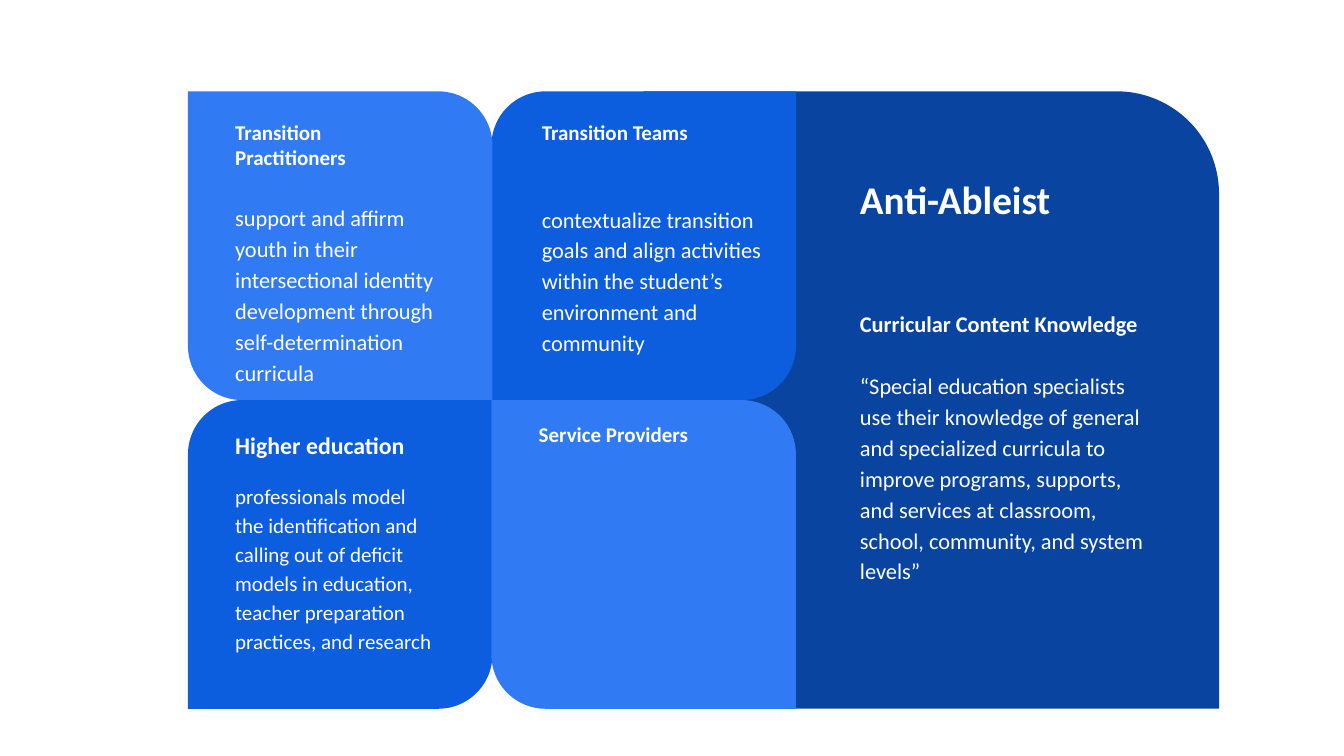
import pptx
import pptx.util
import pptx.dml.color
import pptx.enum.shapes
import pptx.enum.text

PX = 9525  # EMU per px; the slide is 1280 by 720 px
FONT = "Calibri"
INSET = 12
ROUND = 0.178
COLORS = {
    "navy": "0944A1",
    "blue": "0D5DDF",
    "sky": "307BF3",
    "white": "FFFFFF",
}

# Tile grid
LEFT, TOP = 179, 87
WIDE, HIGH = 290, 294
STEP = 289

# Column, row, fill, heading and body as (text, size, left, top, width, height)
TILES = [
    (1, 0, "blue",
     ("Transition Teams", 15, 504, 102, 216, 86),
     ("contextualize transition goals and align activities within the "
      "student’s environment and community", 16, 504, 180, 234, 151)),
    (0, 0, "sky",
     ("Transition Practitioners", 15, 212, 102, 216, 86),
     ("support and affirm youth in their intersectional identity development "
      "through self-determination curricula", 16, 212, 179, 239, 96)),
    (0, 1, "blue",
     ("Higher education", 17, 212, 394, 216, 86),
     ("professionals model the identification and calling out of deficit "
      "models in education, teacher preparation practices, and research",
      15, 212, 445, 216, 96)),
    (1, 1, "sky",
     ("Service Providers", 15, 501, 389, 216, 86), None),
]


def px(*nums):
    return [pptx.util.Emu(num * PX) for num in nums]


def rgb(name):
    return pptx.dml.color.RGBColor.from_string(COLORS[name])


def add_panel(slide, box, fill, flip=False):
    """Add a block with two opposite corners rounded."""
    kind = pptx.enum.shapes.MSO_SHAPE.ROUND_2_DIAG_RECTANGLE
    panel = slide.shapes.add_shape(kind, *px(*box))
    panel.shadow.inherit = False
    panel.fill.solid()
    panel.fill.fore_color.rgb = rgb(fill)
    panel.line.fill.background()
    panel.adjustments[0] = ROUND if flip else 0
    panel.adjustments[1] = 0 if flip else ROUND
    return panel


def set_frame(frame):
    frame.word_wrap = True
    frame.auto_size = pptx.enum.text.MSO_AUTO_SIZE.NONE
    frame.vertical_anchor = pptx.enum.text.MSO_ANCHOR.TOP
    inset = px(INSET)[0]
    frame.margin_left = frame.margin_right = inset
    frame.margin_top = frame.margin_bottom = inset


def add_run(para, text, size, bold=False, lines=1.0):
    para.alignment = pptx.enum.text.PP_ALIGN.LEFT
    para.line_spacing = lines
    run = para.add_run()
    run.text = text
    run.font.name = FONT
    run.font.size = pptx.util.Pt(size)
    run.font.bold = bold
    run.font.color.rgb = rgb("white")


def add_text(slide, box):
    frame = slide.shapes.add_textbox(*px(*box)).text_frame
    set_frame(frame)
    return frame


def set_title(slide, panel, text, box):
    title = slide.shapes.title
    title.left, title.top, title.width, title.height = px(*box)
    set_frame(title.text_frame)
    add_run(title.text_frame.paragraphs[0], text, 28, bold=True)
    panel.element.addnext(title.element)  # bring the title in front


def add_tile(slide, col, row, fill, head, body):
    box = (LEFT + col * STEP, TOP + row * HIGH, WIDE, HIGH)
    add_panel(slide, box, fill, flip=col != row)
    text, size, *place = head
    lines = 1.15 if size > 15 else 1.0
    add_run(add_text(slide, place).paragraphs[0], text, size, True, lines)
    if body:
        text, size, *place = body
        add_run(add_text(slide, place).paragraphs[0], text, size, lines=1.15)


def main():
    deck = pptx.Presentation()
    deck.slide_width, deck.slide_height = px(1280, 720)
    slide = deck.slides.add_slide(deck.slide_layouts[5])

    # Large panel with title and quote
    panel = add_panel(slide, (613, TOP, 548, 2 * HIGH), "navy")
    set_title(slide, panel, "Anti-Ableist", (807, 155, 301, 113))
    frame = add_text(slide, (807, 280, 301, 302))
    head = frame.paragraphs[0]
    add_run(head, "Curricular Content Knowledge", 16, True, 1.15)
    head.space_after = pptx.util.Pt(22)
    add_run(frame.add_paragraph(),
            "“Special education specialists use their knowledge of general and "
            "specialized curricula to improve programs, supports, and services "
            "at classroom, school, community, and system levels”",
            16, lines=1.15)

    # Four tiles
    for tile in TILES:
        add_tile(slide, *tile)

    deck.save("out.pptx")


if __name__ == "__main__":
    main()
